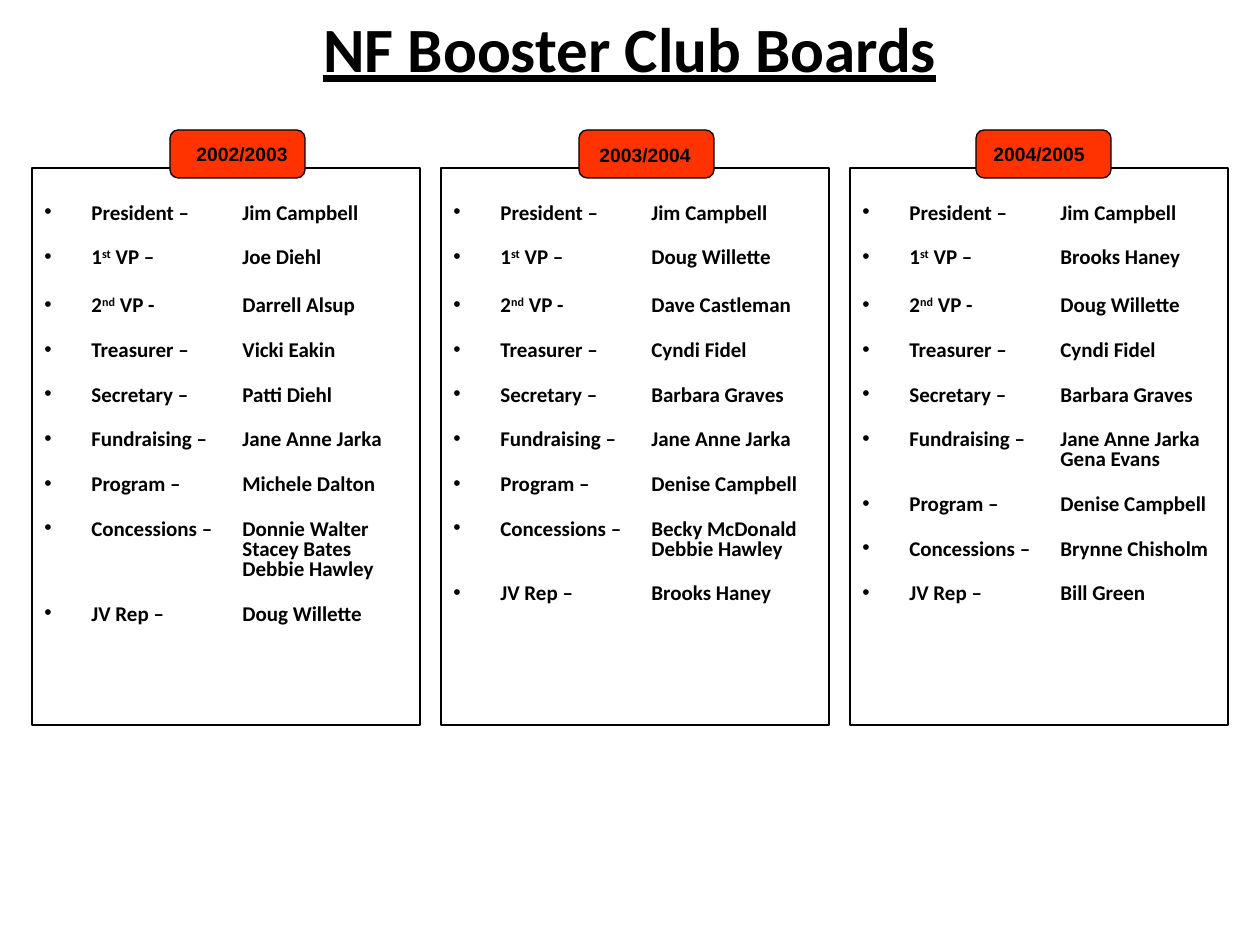
from dataclasses import dataclass

from lxml import etree
from pptx import Presentation
from pptx import util as u
from pptx.dml.color import RGBColor
from pptx.enum import shapes, text
from pptx.oxml import ns

PX = 914400 / 126


@dataclass(frozen=True)
class Theme:
    """Colours, fonts and type sizes of the slide."""
    ink: RGBColor = RGBColor(0x00, 0x00, 0x00)
    tag: RGBColor = RGBColor(0xFF, 0x33, 0x00)
    body_font: str = "Calibri"
    tag_font: str = "Arial"
    title_size: int = 36
    body_size: int = 12
    tag_size: int = 11
    line_width: float = 0.75
    row_gap: int = 14
    ordinal_gap: int = 16


THEME = Theme()

ROLES = ["President –", "1|st| VP –", "2|nd| VP -", "Treasurer –", "Secretary –",
         "Fundraising –", "Program –", "Concessions –", "JV Rep –"]

BOARDS = [
    {"year": "2002/2003", "left": 32, "width": 388, "tag": 138, "caption": (14, 6),
     "members": ["Jim Campbell", "Joe Diehl", "Darrell Alsup", "Vicki Eakin", "Patti Diehl",
                 "Jane Anne Jarka", "Michele Dalton",
                 "Donnie Walter|Stacey Bates|Debbie Hawley", "Doug Willette"]},
    {"year": "2003/2004", "left": 441, "width": 388, "tag": 138, "caption": (8, 7),
     "members": ["Jim Campbell", "Doug Willette", "Dave Castleman", "Cyndi Fidel",
                 "Barbara Graves", "Jane Anne Jarka", "Denise Campbell",
                 "Becky McDonald|Debbie Hawley", "Brooks Haney"]},
    {"year": "2004/2005", "left": 850, "width": 378, "tag": 126, "caption": (5, 6),
     "members": ["Jim Campbell", "Brooks Haney", "Doug Willette", "Cyndi Fidel",
                 "Barbara Graves", "Jane Anne Jarka|Gena Evans", "Denise Campbell",
                 "Brynne Chisholm", "Bill Green"]},
]


def px(length):
    """Turn pixels into EMU."""
    return u.Emu(round(length * PX))


def style(span, font, size):
    """Give a run the bold black look in a font and size."""
    span.font.name = font
    span.font.size = u.Pt(size)
    span.font.bold = True
    span.font.color.rgb = THEME.ink


def add_text_box(page, left, top, width, height):
    """Add a wrapping text box and return its text frame."""
    frame = page.shapes.add_textbox(px(left), px(top), px(width), px(height)).text_frame
    frame.word_wrap = True
    return frame


def add_outline(page, kind, left, top, width, height, fill=None):
    """Add a thinly outlined shape, filled if a colour is given."""
    shape = page.shapes.add_shape(kind, px(left), px(top), px(width), px(height))
    shape.shadow.inherit = False
    shape.line.color.rgb = THEME.ink
    shape.line.width = u.Pt(THEME.line_width)
    if fill is None:
        shape.fill.background()
    else:
        shape.fill.solid()
        shape.fill.fore_color.rgb = fill
    return shape


def add_bullet(para, indent, name_stop):
    """Give a paragraph a hanging bullet and a tab stop for the names."""
    props = para._p.get_or_add_pPr()
    props.set("marL", str(px(indent)))
    props.set("indent", str(-px(indent)))
    etree.SubElement(props, ns.qn("a:buFont")).set("typeface", THEME.tag_font)
    etree.SubElement(props, ns.qn("a:buChar")).set("char", "•")
    stops = etree.SubElement(props, ns.qn("a:tabLst"))
    stop = etree.SubElement(stops, ns.qn("a:tab"))
    stop.set("pos", str(px(name_stop)))
    stop.set("algn", "l")


def add_title(page, left, top, width, height):
    """Place the underlined slide title."""
    frame = add_text_box(page, left, top, width, height)
    frame.vertical_anchor = text.MSO_ANCHOR.MIDDLE
    frame.text = "NF Booster Club Boards"
    para = frame.paragraphs[0]
    para.alignment = text.PP_ALIGN.CENTER
    style(para.runs[0], THEME.body_font, THEME.title_size)
    para.runs[0].font.underline = True


def add_tag(page, year, left, top, caption):
    """Place a year tag with its caption."""
    tag = add_outline(page, shapes.MSO_SHAPE.ROUNDED_RECTANGLE, left, top, 135, 48, THEME.tag)
    tag.adjustments[0] = 0.17
    frame = add_text_box(page, left + caption[0], top + caption[1], 121, 37)
    frame.text = year
    style(frame.paragraphs[0].runs[0], THEME.tag_font, THEME.tag_size)


def add_member(para, role, names):
    """Write a role, with a raised ordinal if any, and its names."""
    for index, part in enumerate(role.split("|")):
        span = para.add_run()
        span.text = part
        style(span, THEME.body_font, THEME.body_size)
        if index == 1:
            span.font._element.set("baseline", "30000")
    for index, name in enumerate(names.split("|")):
        if index:
            para.add_line_break()
        span = para.add_run()
        span.text = "\t" + name
        style(span, THEME.body_font, THEME.body_size)


def add_members(page, members, left, top):
    """Place the bulleted list of roles and names."""
    frame = add_text_box(page, left, top, 588, 766)
    frame.margin_top = px(36)
    for index, (role, names) in enumerate(zip(ROLES, members)):
        para = frame.add_paragraph() if index else frame.paragraphs[0]
        para.line_spacing = 0.8
        gap = THEME.ordinal_gap if role.startswith("2") else THEME.row_gap
        para.space_before = u.Pt(gap if index else 0)
        add_bullet(para, 47, 198)
        add_member(para, role, names)


def add_board(page, board, top, height):
    """Place one board: panel, year tag and members."""
    left = board["left"]
    add_outline(page, shapes.MSO_SHAPE.RECTANGLE, left, top, board["width"], height)
    add_tag(page, board["year"], left + board["tag"], top - 38, board["caption"])
    add_members(page, board["members"], left, top)


def main():
    """Build the slide and save it."""
    deck = Presentation()
    deck.slide_width, deck.slide_height = px(1260), px(945)
    page = deck.slides.add_slide(deck.slide_layouts[6])
    add_title(page, 63, -32, 1134, 158)
    for board in BOARDS:
        add_board(page, board, 168, 557)
    deck.save("out.pptx")


if __name__ == "__main__":
    main()
